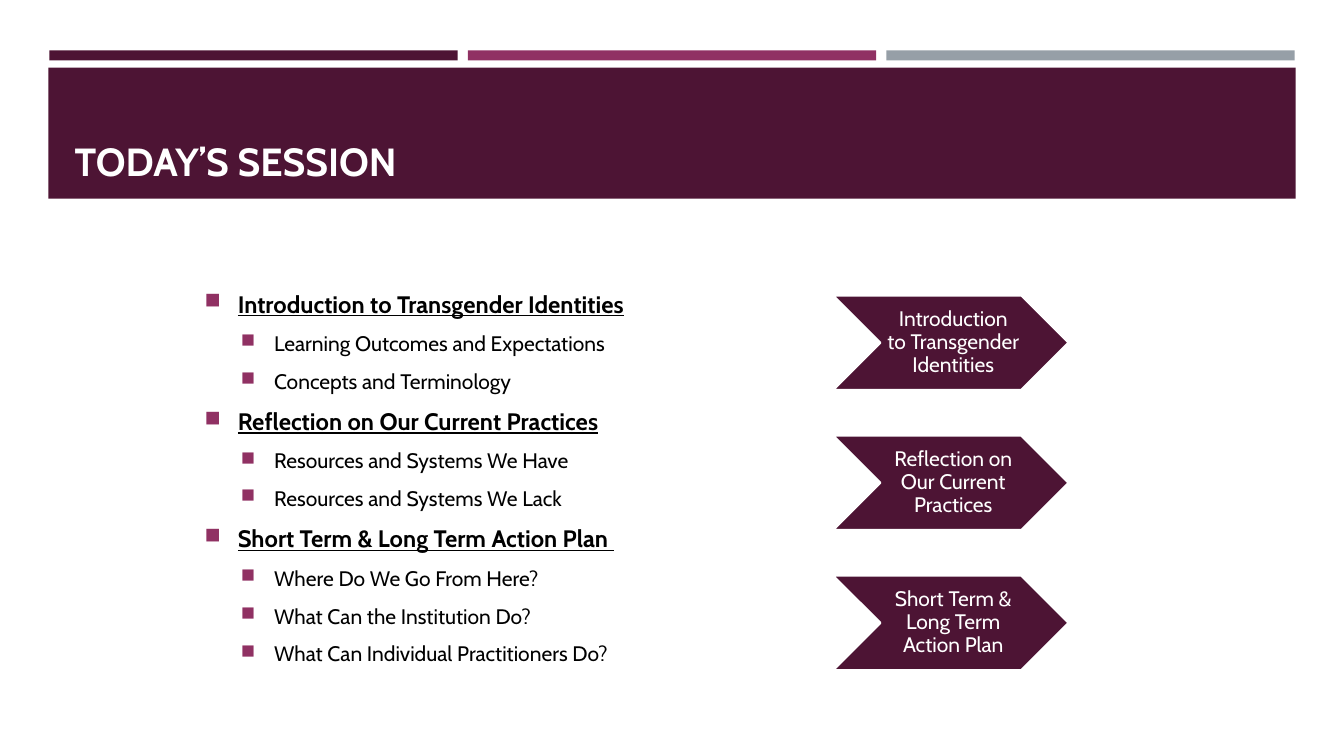
from typing import NamedTuple

import lxml.etree
import pptx
import pptx.dml.color
import pptx.enum.shapes
import pptx.enum.text
import pptx.oxml.ns
import pptx.util

Inches = pptx.util.Inches
Pt = pptx.util.Pt
Kind = pptx.enum.shapes.MSO_SHAPE
Align = pptx.enum.text.PP_ALIGN
Anchor = pptx.enum.text.MSO_ANCHOR

COLORS = {
    "plum": "4D1434",
    "rose": "903163",
    "gray": "969FA7",
    "white": "FFFFFF",
    "black": "000000",
}
FONT = "Cabin"


class Box(NamedTuple):
    left: float
    top: float
    width: float
    height: float


class Block(NamedTuple):
    kind: Kind
    box: Box
    fill: str
    line: str | None = None


class Topic(NamedTuple):
    name: str
    tail: str
    items: tuple[str, ...]


TOPICS = (
    Topic("Introduction to Transgender Identities", "",
          ("Learning Outcomes and Expectations", "Concepts and Terminology")),
    Topic("Reflection on Our Current Practices", "",
          ("Resources and Systems We Have", "Resources and Systems We Lack")),
    Topic("Short Term & Long Term Action Plan", " ",
          ("Where Do We Go From Here?", "What Can the Institution Do?",
           "What Can Individual Practitioners Do?")),
)


def color(name: str) -> pptx.dml.color.RGBColor:
    return pptx.dml.color.RGBColor.from_string(COLORS[name])


def span(box: Box) -> list[int]:
    return [Inches(side) for side in box]


def draw(slide, block: Block) -> None:
    shape = slide.shapes.add_shape(block.kind, *span(block.box))
    shape.shadow.inherit = False
    shape.fill.solid()
    shape.fill.fore_color.rgb = color(block.fill)
    if block.line:
        shape.line.color.rgb = color(block.line)
        shape.line.width = Pt(1.75)
    else:
        shape.line.fill.background()


def write(para, text: str, *, size: float, hue: str, bold: bool = False,
          under: bool = False, align: Align = Align.LEFT,
          lead: float = 1.0, before: float = 0, after: float = 0) -> None:
    para.alignment = align
    para.line_spacing = lead
    para.space_before = Pt(before)
    para.space_after = Pt(after)
    run = para.add_run()
    run.text = text
    font = run.font
    font.name = FONT
    font.size = Pt(size)
    font.bold = bold
    font.underline = under
    font.color.rgb = color(hue)


def mark(para, level: int) -> None:
    para.level = level
    props = para._p.get_or_add_pPr()
    props.set("marL", str(Inches(0.33 + 0.36 * level)))
    props.set("indent", str(Inches(-0.33)))
    qn = pptx.oxml.ns.qn
    tint = lxml.etree.SubElement(props, qn("a:buClr"))
    lxml.etree.SubElement(tint, qn("a:srgbClr"), val=COLORS["rose"])
    lxml.etree.SubElement(props, qn("a:buSzPct"), val="92000")
    lxml.etree.SubElement(props, qn("a:buChar"), char="■")


def frame(slide, box: Box):
    body = slide.shapes.add_textbox(*span(box)).text_frame
    body.word_wrap = True
    body.vertical_anchor = Anchor.MIDDLE
    return body


def header(slide) -> None:
    for i, hue in enumerate(("plum", "rose", "gray")):
        draw(slide, Block(Kind.RECTANGLE, Box(0.49 + 4.15 * i, 0.5, 4.05, 0.1), hue))
    draw(slide, Block(Kind.RECTANGLE, Box(0.48, 0.67, 12.37, 1.3), "plum"))
    title = slide.shapes.title
    title.left, title.top, title.width, title.height = span(Box(0.64, 0.77, 12.06, 1.11))
    title.element.getparent().append(title.element)
    body = title.text_frame
    body.auto_size = pptx.enum.text.MSO_AUTO_SIZE.NONE
    body.vertical_anchor = Anchor.BOTTOM
    write(body.paragraphs[0], "TODAY’S SESSION", size=28, hue="white", bold=True)


def steps(slide) -> None:
    for i, topic in enumerate(TOPICS):
        top = 2.93 + 1.39 * i
        draw(slide, Block(Kind.CHEVRON, Box(8.26, top, 2.34, 0.94), "plum", "white"))
        body = frame(slide, Box(8.73, top, 1.4, 0.94))
        body.margin_left = Inches(0.07)
        body.margin_top = body.margin_right = body.margin_bottom = Inches(0.02)
        write(body.paragraphs[0], topic.name, size=15, hue="white",
              align=Align.CENTER, lead=0.9)


def agenda(slide) -> None:
    body = frame(slide, Box(1.93, 2.71, 5.09, 4.06))
    rows = [(text, level) for topic in TOPICS
            for text, level in ((topic.name + topic.tail, 0),
                                *((item, 1) for item in topic.items))]
    for i, (text, level) in enumerate(rows):
        para = body.add_paragraph() if i else body.paragraphs[0]
        head = level == 0
        size = 17 if head else 15
        write(para, text, size=size, hue="black", bold=head, under=head,
              before=size * 0.2, after=6)
        mark(para, level)


def main() -> None:
    deck = pptx.Presentation()
    deck.slide_width = Inches(13.33)
    deck.slide_height = Inches(7.5)
    slide = deck.slides.add_slide(deck.slide_layouts[5])
    header(slide)
    steps(slide)
    agenda(slide)
    deck.save("out.pptx")


if __name__ == "__main__":
    main()
